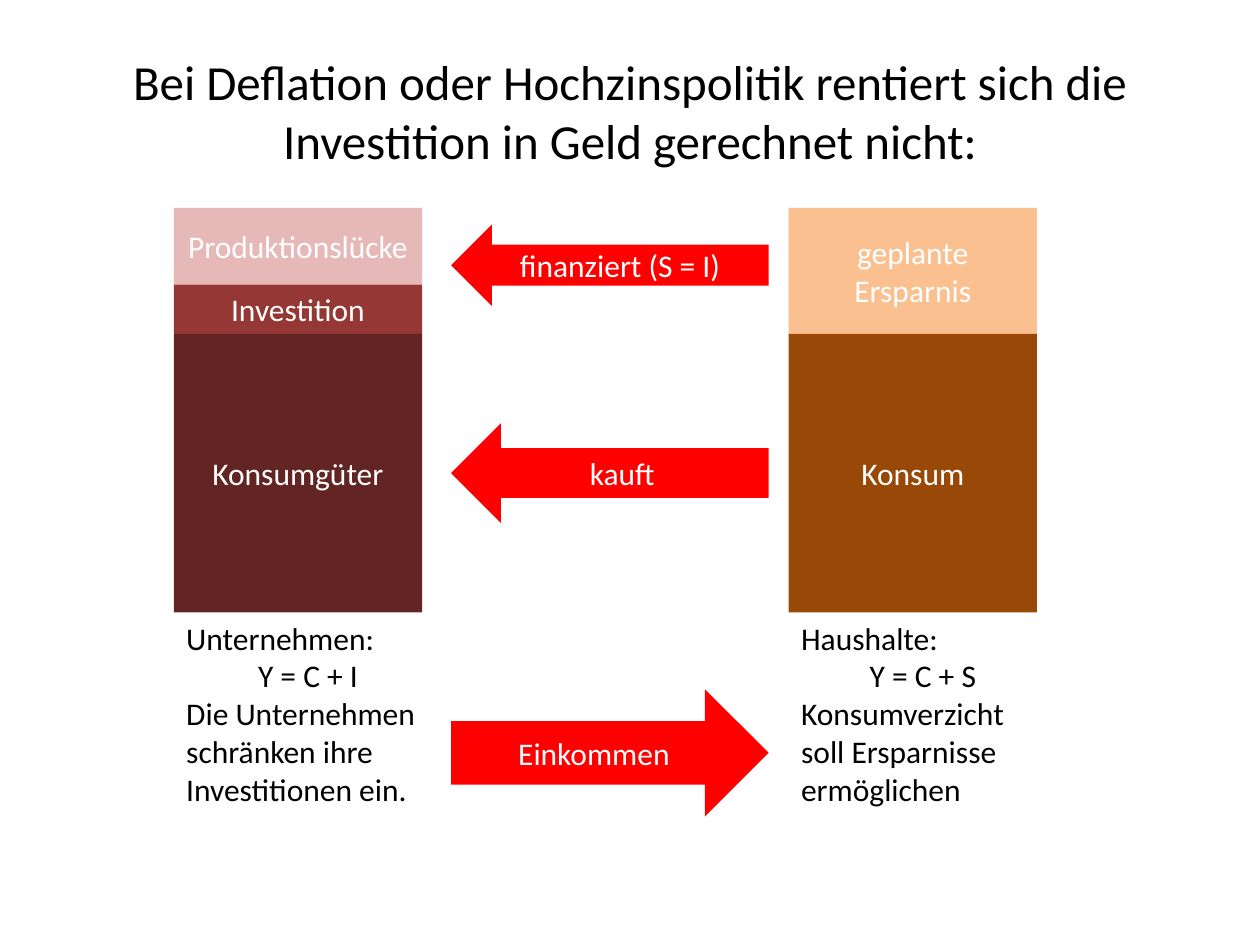
from pptx import Presentation
from pptx.util import Inches, Pt
from pptx.dml.color import RGBColor
from pptx.enum.shapes import MSO_SHAPE as SHAPE
from pptx.enum.text import MSO_ANCHOR as ANCHOR, PP_ALIGN as ALIGN

COLORS = {
    "black": "000000", "white": "FFFFFF", "arrow": "FF0000",
    "gap": "E6B9B8", "investment": "953735", "goods": "632523",
    "saving": "FAC090", "consumption": "984807",
}
FIRMS, FLOWS, HOUSEHOLDS = 1.38, 3.58, 6.26  # left edges of the columns
BAR_W, FLOW_W, NOTE_W = 1.97, 2.52, 2.13
BAR_TOP, BAR_BOTTOM = 1.65, 4.86


def write(s, paragraphs, color, size=18, anchor=ANCHOR.MIDDLE):
    """Fill a shape with (text, alignment) paragraphs."""
    tf = s.text_frame
    tf.word_wrap = True
    tf.vertical_anchor = anchor
    for i, (text, align) in enumerate(paragraphs):
        p = tf.paragraphs[0] if i == 0 else tf.add_paragraph()
        p.alignment = align
        r = p.add_run()
        r.text = text
        for name, value in {"name": "Calibri", "size": Pt(size)}.items():
            setattr(r.font, name, value)
        r.font.color.rgb = RGBColor.from_string(COLORS[color])


def add_block(kind, box, fill, label):
    s = slide.shapes.add_shape(kind, *map(Inches, box))
    s.shadow.inherit = False
    s.fill.solid()
    s.fill.fore_color.rgb = RGBColor.from_string(COLORS[fill])
    s.line.fill.background()
    write(s, [(label, ALIGN.CENTER)], "white")


prs = Presentation()
prs.slide_width, prs.slide_height = Inches(10), Inches(7.5)
slide = prs.slides.add_slide(prs.slide_layouts[6])

title = slide.shapes.add_textbox(*map(Inches, (0.5, 0.21, 9, 1.34)))
write(title, [("Bei Deflation oder Hochzinspolitik rentiert sich die "
               "Investition in Geld gerechnet nicht:", ALIGN.CENTER)], "black", 28)

# Stacked bars, from top to bottom
stacks = {
    FIRMS: [("Produktionslücke", 0.61, "gap"), ("Investition", 0.39, "investment"),
            ("Konsumgüter", 2.21, "goods")],
    HOUSEHOLDS: [("geplante Ersparnis", 1, "saving"), ("Konsum", 2.21, "consumption")],
}
for left, parts in stacks.items():
    top = BAR_TOP
    for label, height, fill in parts:
        add_block(SHAPE.RECTANGLE, (left, top, BAR_W, height), fill, label)
        top += height

# Flows between the two sectors
for kind, label, top, height in [
    (SHAPE.LEFT_ARROW, "finanziert (S = I)", 1.78, 0.65),
    (SHAPE.LEFT_ARROW, "kauft", 3.36, 0.79),
    (SHAPE.RIGHT_ARROW, "Einkommen", 5.47, 1.01),
]:
    add_block(kind, (FLOWS, top, FLOW_W, height), "arrow", label)

# Notes below the bars
for left, sector, equation, comment in [
    (FIRMS, "Unternehmen:", "Y = C + I",
     "Die Unternehmen schränken ihre Investitionen ein."),
    (HOUSEHOLDS, "Haushalte:", "Y = C + S",
     "Konsumverzicht soll Ersparnisse ermöglichen"),
]:
    note = slide.shapes.add_textbox(*map(Inches, (left, BAR_BOTTOM, NOTE_W, 1.62)))
    write(note, [(sector, ALIGN.LEFT), (equation, ALIGN.CENTER), (comment, ALIGN.LEFT)],
          "black", anchor=ANCHOR.TOP)

prs.save("out.pptx")
